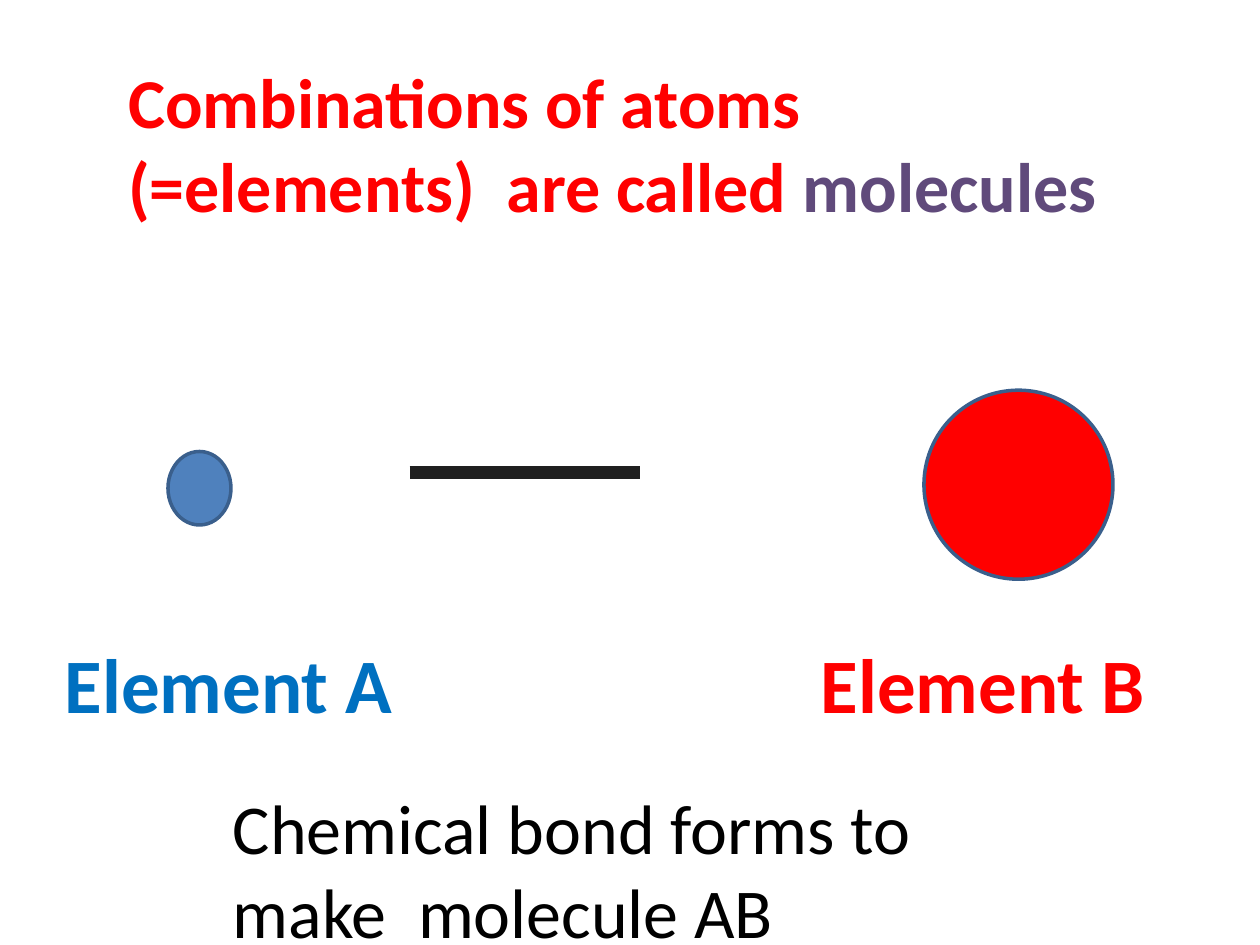
from dataclasses import dataclass

from lxml import etree
from pptx import Presentation
from pptx.dml.color import RGBColor
from pptx.enum import shapes, text
from pptx.oxml import ns
from pptx.util import Pt


@dataclass(frozen=True)
class Theme:
    font: str = "Calibri"
    red: str = "FF0000"
    purple: str = "604A7B"
    label_blue: str = "0070C0"
    atom_blue: str = "4F81BD"
    outline: str = "3A5F8C"
    bond: str = "1F1F1F"
    black: str = "000000"
    body_size: int = 40
    label_size: int = 44


THEME = Theme()


def color(value):
    return RGBColor.from_string(value)


def points(*values):
    return [Pt(value) for value in values]


def write_runs(shape, size, bold, *pieces):
    frame = shape.text_frame
    frame.word_wrap = True
    frame.auto_size = text.MSO_AUTO_SIZE.NONE
    frame.vertical_anchor = text.MSO_ANCHOR.TOP
    paragraph = frame.paragraphs[0]
    paragraph.alignment = text.PP_ALIGN.LEFT
    for words, ink in pieces:
        run = paragraph.add_run()
        run.text = words
        run.font.name = THEME.font
        run.font.size = Pt(size)
        run.font.bold = bold
        run.font.color.rgb = color(ink)


def add_title(slide, box, *pieces):
    title = slide.shapes.title
    title.left, title.top, title.width, title.height = points(*box)
    write_runs(title, THEME.body_size, True, *pieces)


def add_text(slide, box, words, ink, size, bold):
    write_runs(slide.shapes.add_textbox(*points(*box)), size, bold, (words, ink))


def add_atom(slide, box, fill):
    atom = slide.shapes.add_shape(shapes.MSO_SHAPE.OVAL, *points(*box))
    atom.shadow.inherit = False
    atom.fill.solid()
    atom.fill.fore_color.rgb = color(fill)
    atom.line.color.rgb = color(THEME.outline)
    atom.line.width = Pt(2)


def add_bond(slide, left, right, height):
    bond = slide.shapes.add_connector(
        shapes.MSO_CONNECTOR.STRAIGHT, *points(left, height, right, height)
    )
    bond.line.color.rgb = color(THEME.bond)
    bond.line.width = Pt(7)
    etree.SubElement(bond._element.spPr, ns.qn("a:effectLst"))


def main():
    presentation = Presentation()
    presentation.slide_width, presentation.slide_height = points(720, 540)
    slide = presentation.slides.add_slide(presentation.slide_layouts[5])

    add_title(
        slide,
        (66, 30, 580, 153),
        ("Combinations of atoms (=elements)  are called ", THEME.red),
        ("molecules", THEME.purple),
    )
    add_atom(slide, (96, 258, 36, 42), THEME.atom_blue)
    add_atom(slide, (528, 223, 108, 108), THEME.red)
    for left, words, ink in (
        (30, "Element A", THEME.label_blue),
        (462, "Element B", THEME.red),
    ):
        add_text(slide, (left, 360, 204, 60.5), words, ink, THEME.label_size, True)
    add_bond(slide, 234, 366, 270)
    add_text(
        slide,
        (126, 445, 432, 104),
        "Chemical bond forms to make  molecule AB",
        THEME.black,
        THEME.body_size,
        False,
    )
    presentation.save("out.pptx")


if __name__ == "__main__":
    main()
